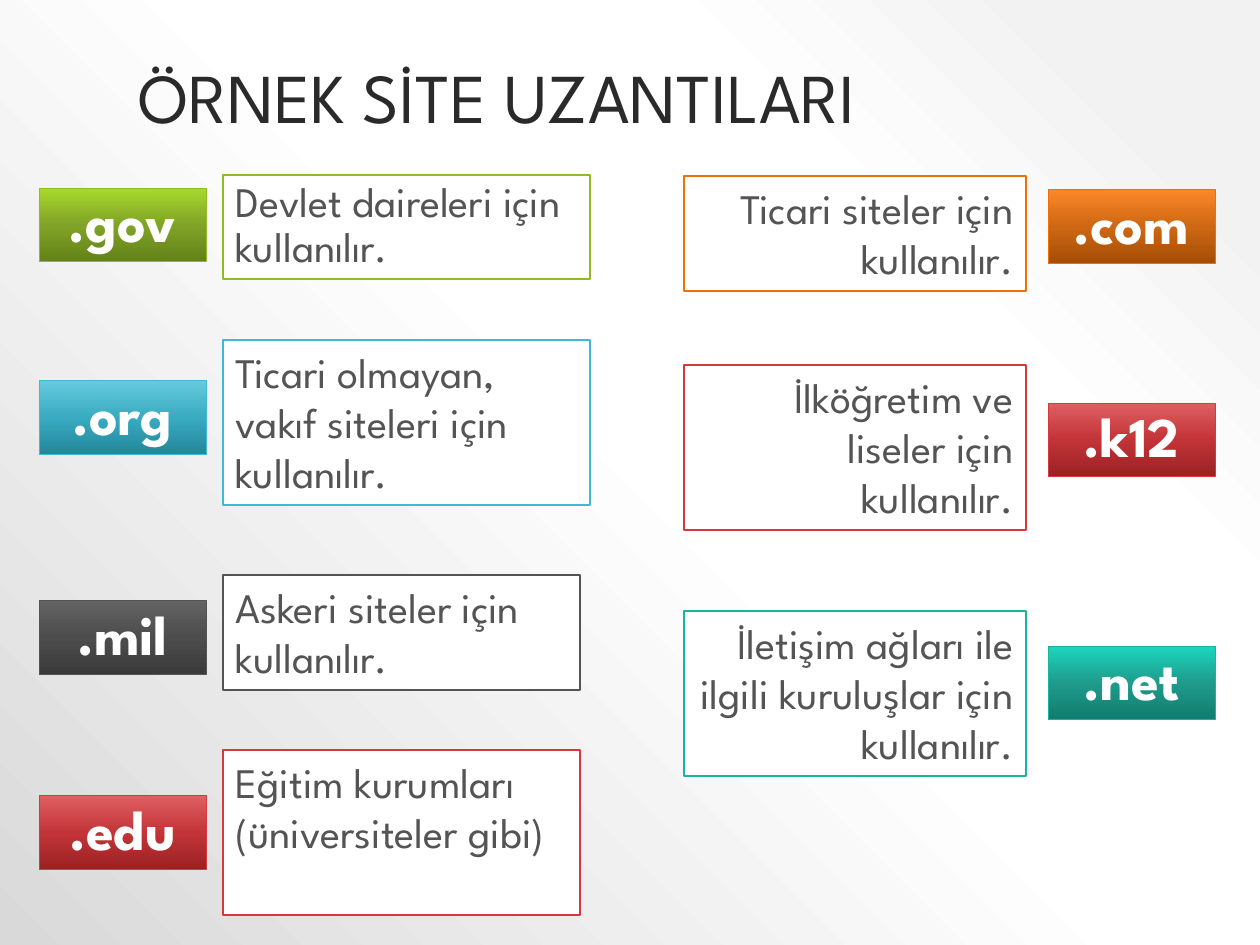
import pptx
import pptx.util
import pptx.dml.color
import pptx.enum.shapes
import pptx.enum.text
import pptx.oxml
import pptx.oxml.ns
from lxml import etree

PX = 914400 / 126
FONT = "League Spartan"
ALIGN = pptx.enum.text.PP_ALIGN
ANCHOR = pptx.enum.text.MSO_ANCHOR

TITLE = "ÖRNEK SİTE UZANTILARI"
BACKGROUND = [(10, "F2F2F2"), (28, "FFFFFF"), (48, "FFFFFF"), (100, "D9D9D9")]

# Outline colour, then the badge gradient from top to bottom
PALETTE = {
    "green": ("90BB23", "A9DA2C", "80A327", "638118"),
    "blue": ("40BAD2", "66CADD", "38ABC1", "248699"),
    "grey": ("545454", "636363", "4C4C4C", "3A3A3A"),
    "red": ("D5393D", "DF5F63", "C23437", "9A2124"),
    "orange": ("EE7008", "FB8727", "CD6713", "A44D06"),
    "teal": ("1AB39F", "1CD6BE", "1F9B8B", "127C6E"),
}

# Per column: badge left, description left, alignment and entries of
# (domain, description, colour, badge top, description top, width, height, line spacing)
COLUMNS = [
    (39, 223, ALIGN.LEFT, [
        (".gov", "Devlet daireleri için kullanılır.", "green", 188, 175, 367, 104, 0.9),
        (".org", "Ticari olmayan, vakıf siteleri için kullanılır.", "blue", 381, 340, 367, 165, 1),
        (".mil", "Askeri siteler için kullanılır.", "grey", 601, 575, 357, 115, 1),
        (".edu", "Eğitim kurumları (üniversiteler gibi)", "red", 796, 750, 357, 165, 1),
    ]),
    (1048, 684, ALIGN.RIGHT, [
        (".com", "Ticari siteler için kullanılır.", "orange", 190, 176, 342, 115, 1),
        (".k12", "İlköğretim ve liseler için kullanılır.", "red", 403, 365, 342, 165, 1),
        (".net", "İletişim ağları ile ilgili kuruluşlar için kullanılır.", "teal", 646, 611, 342, 165, 1),
    ]),
]
BADGE_W, BADGE_H = 167, 74


def px(n):
    return round(n * PX)


def rgb(value):
    return pptx.dml.color.RGBColor.from_string(value)


def set_gradient(fill, owner, stops):
    """Give a fill any number of (percent, colour) stops; return its element."""
    fill.gradient()
    gradient = owner.find(".//" + pptx.oxml.ns.qn("a:gradFill"))
    stop_list = gradient.find(pptx.oxml.ns.qn("a:gsLst"))
    for old in list(stop_list):
        stop_list.remove(old)
    for percent, colour in stops:
        stop = etree.SubElement(stop_list, pptx.oxml.ns.qn("a:gs"), pos=str(percent * 1000))
        etree.SubElement(stop, pptx.oxml.ns.qn("a:srgbClr"), val=colour)
    return gradient


def write(shape, text, size, colour, align, spacing, anchor=ANCHOR.TOP, bold=False):
    frame = shape.text_frame
    frame.word_wrap = True
    frame.vertical_anchor = anchor
    paragraph = frame.paragraphs[0]
    paragraph.alignment = align
    paragraph.line_spacing = spacing
    run = paragraph.add_run()
    run.text = text
    run.font.name = FONT
    run.font.size = pptx.util.Pt(size)
    run.font.bold = bold
    run.font.color.rgb = rgb(colour)


def add_box(slide, left, top, width, height, outline, weight):
    box = slide.shapes.add_shape(pptx.enum.shapes.MSO_SHAPE.RECTANGLE,
                                 px(left), px(top), px(width), px(height))
    box.shadow.inherit = False
    box.line.color.rgb = rgb(outline)
    box.line.width = pptx.util.Pt(weight)
    return box


def main():
    deck = pptx.Presentation()
    deck.slide_width, deck.slide_height = px(1260), px(945)
    slide = deck.slides.add_slide(deck.slide_layouts[6])

    # Background: circular gradient spreading from the top right corner
    gradient = set_gradient(slide.background.fill, slide.element, BACKGROUND)
    gradient.remove(gradient.find(pptx.oxml.ns.qn("a:lin")))
    circle = etree.SubElement(gradient, pptx.oxml.ns.qn("a:path"))
    circle.set("path", "circle")
    etree.SubElement(circle, pptx.oxml.ns.qn("a:fillToRect"), l="100000", b="100000")

    # Title
    title = slide.shapes.add_textbox(px(126), px(38), px(1008), px(107))
    write(title, TITLE, 40, "2A2A2A", ALIGN.LEFT, 0.9, ANCHOR.BOTTOM)

    # Domain badges with their descriptions
    for badge_left, box_left, align, entries in COLUMNS:
        for domain, description, colour, badge_top, top, width, height, spacing in entries:
            outline, *shades = PALETTE[colour]
            badge = add_box(slide, badge_left, badge_top, BADGE_W, BADGE_H, outline, 0.5)
            set_gradient(badge.fill, badge.element, zip((0, 50, 100), shades))
            badge.fill.gradient_angle = 270
            write(badge, domain, 32, "FFFFFF", ALIGN.CENTER, 0.9, bold=True)

            box = add_box(slide, box_left, top, width, height, outline, 1)
            box.fill.solid()
            box.fill.fore_color.rgb = rgb("FFFFFF")
            write(box, description, 24, "545454", align, spacing)

    deck.save("out.pptx")


if __name__ == "__main__":
    main()
